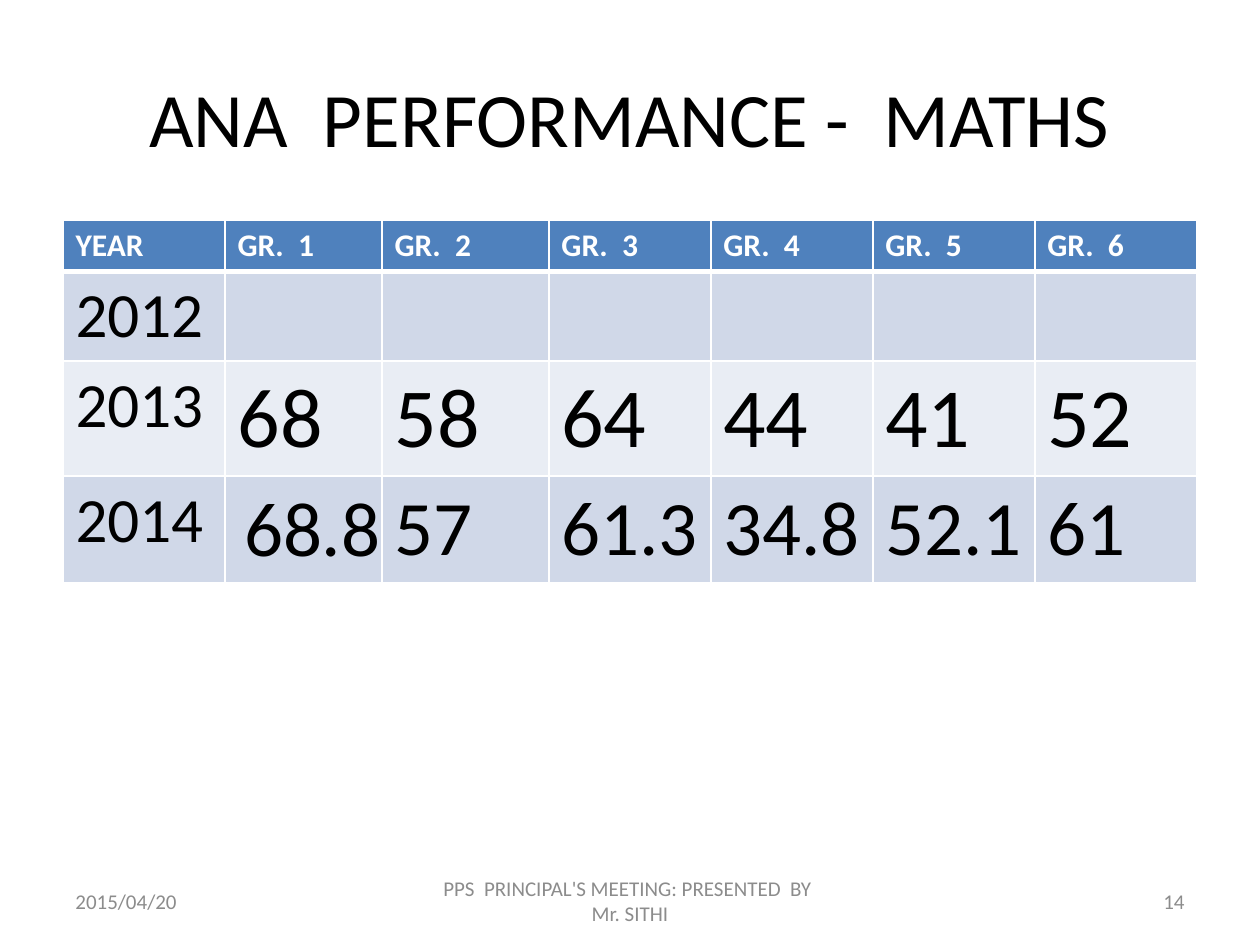
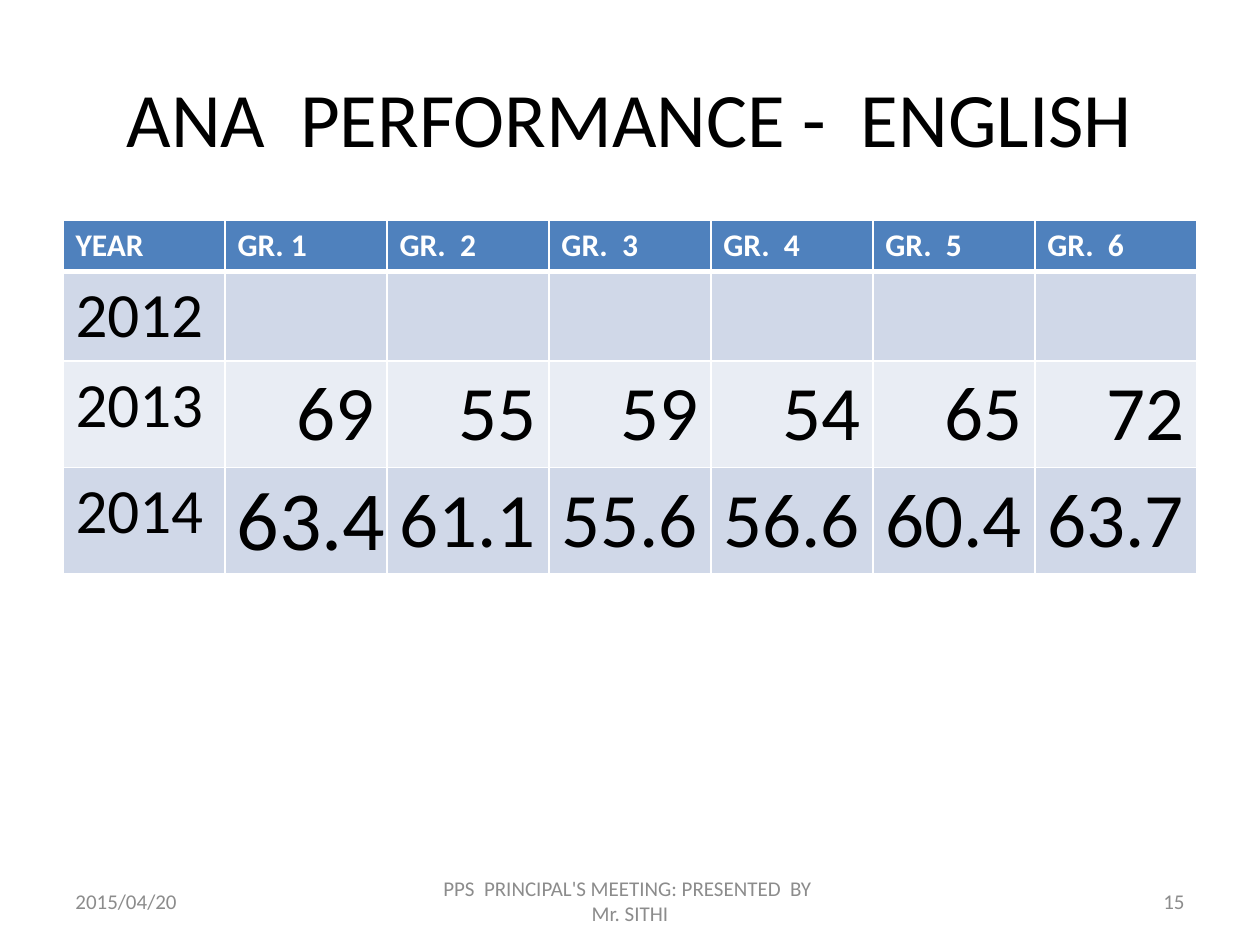
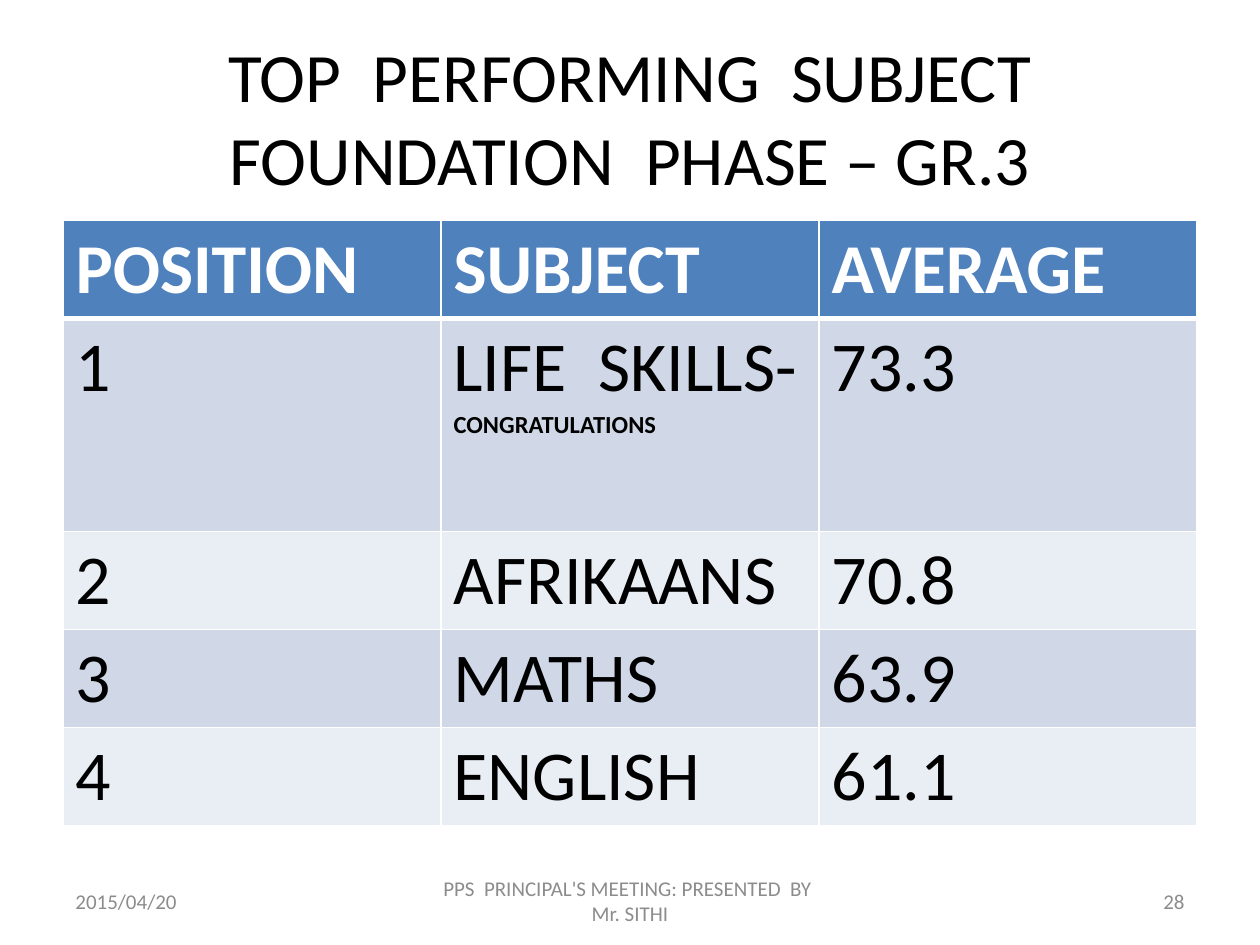
from dataclasses import dataclass

from lxml import etree
from pptx import Presentation
from pptx.dml.color import RGBColor
from pptx.enum.text import MSO_ANCHOR, PP_ALIGN
from pptx.oxml.ns import qn
from pptx.util import Inches, Pt

LEFT, CENTER, RIGHT = PP_ALIGN.LEFT, PP_ALIGN.CENTER, PP_ALIGN.RIGHT
MIDDLE = MSO_ANCHOR.MIDDLE

FONT = "Calibri"
COLORS = {
    "white": "FFFFFF",
    "black": "000000",
    "header": "4F81BD",
    "dark_band": "D0D8E8",
    "light_band": "E9EDF4",
    "footer": "8C8C8C",
}
PAGE_WIDTH, PAGE_HEIGHT = Inches(10), Inches(7.5)
MARGIN = 0.05
CONTENT = 1 - 2 * MARGIN
TABLE_TOP = 1.75 / 7.5
LINE_HEIGHT = 1.22
CELL_PADDING = 0.1
THIN, THICK = 1, 3


@dataclass(frozen=True)
class Area:
    left: float
    top: float
    width: float
    height: float


@dataclass(frozen=True)
class TextStyle:
    size: float
    color: str
    align: PP_ALIGN = LEFT
    bold: bool = False


@dataclass(frozen=True)
class Row:
    label: str
    values: tuple[str, ...]
    size: float
    label_size: float
    align: PP_ALIGN = LEFT
    tight_size: float = 0
    note: str = ""
    height: float = 0

    def inches(self) -> float:
        tallest = max(self.size, self.label_size)
        return self.height or tallest * LINE_HEIGHT / 72 + CELL_PADDING


@dataclass(frozen=True)
class Page:
    title: str
    title_size: float
    number: str
    columns: tuple[float, ...]
    rows: tuple[Row, ...]


TITLE_AREA = Area(MARGIN, 0.04, CONTENT, 1 / 6)
FOOTER_TOP, FOOTER_HEIGHT = 6.95 / 7.5, 0.4 / 7.5
SIDE_WIDTH, MIDDLE_WIDTH = 0.7 / 3, 0.95 / 3
DATE_AREA = Area(MARGIN, FOOTER_TOP, SIDE_WIDTH, FOOTER_HEIGHT)
EVENT_AREA = Area((1 - MIDDLE_WIDTH) / 2, FOOTER_TOP, MIDDLE_WIDTH, FOOTER_HEIGHT)
NUMBER_AREA = Area(1 - MARGIN - SIDE_WIDTH, FOOTER_TOP, SIDE_WIDTH, FOOTER_HEIGHT)

GRADES = tuple(f"GR.  {grade}" for grade in range(1, 7))
NO_MARKS = ("",) * len(GRADES)


def year_header(grades: tuple[str, ...]) -> Row:
    return Row("YEAR", grades, 18, 18)


def ranking(position: int, subject: str, average: str, note: str = "",
            height: float = 0) -> Row:
    return Row(str(position), (subject, average), 40, 40, note=note, height=height)


PAGES = (
    Page("ANA  PERFORMANCE -  MATHS", 44, "14", (1.29, 1.25, 1.33, 1.29, 1.29, 1.29, 1.29), (
        year_header(GRADES),
        Row("2012", NO_MARKS, 36, 36),
        Row("2013", ("68", "58", "64", "44", "41", "52"), 48, 36),
        Row("2014", ("68.8", "57", "61.3", "34.8", "52.1", "61"), 44, 36, tight_size=44),
    )),
    Page("ANA  PERFORMANCE -  ENGLISH", 44, "15", (1,) * 7, (
        year_header(("GR. 1",) + GRADES[1:]),
        Row("2012", NO_MARKS, 36, 36),
        Row("2013", ("69", "55", "59", "54", "65", "72"), 44, 36, RIGHT),
        Row("2014", ("63.4", "61.1", "55.6", "56.6", "60.4", "63.7"), 44, 36, tight_size=48),
    )),
    Page("TOP  PERFORMING  SUBJECT\vFOUNDATION  PHASE – GR.3", 39.6, "28", (1,) * 3, (
        Row("POSITION", ("SUBJECT", "AVERAGE"), 40, 40),
        ranking(1, "LIFE  SKILLS- ", "73.3", "CONGRATULATIONS", 1.69),
        ranking(2, "AFRIKAANS", "70.8"),
        ranking(3, "MATHS", "63.9"),
        ranking(4, "ENGLISH", "61.1"),
    )),
)


def rgb(name: str) -> RGBColor:
    return RGBColor.from_string(COLORS[name])


def format_span(span, style: TextStyle) -> None:
    span.font.name = FONT
    span.font.size = Pt(style.size)
    span.font.bold = style.bold
    span.font.color.rgb = rgb(style.color)


def write(frame, text: str, style: TextStyle) -> None:
    frame.text = text
    for para in frame.paragraphs:
        para.alignment = style.align
        for span in para.runs:
            format_span(span, style)


def add_label(slide, area: Area, text: str, style: TextStyle) -> None:
    box = slide.shapes.add_textbox(
        round(area.left * PAGE_WIDTH), round(area.top * PAGE_HEIGHT),
        round(area.width * PAGE_WIDTH), round(area.height * PAGE_HEIGHT))
    box.text_frame.word_wrap = True
    box.text_frame.vertical_anchor = MIDDLE
    write(box.text_frame, text, style)


def set_borders(cell, top: int, bottom: int) -> None:
    properties = cell._tc.get_or_add_tcPr()
    for side, width in (("L", THIN), ("R", THIN), ("T", top), ("B", bottom)):
        line = etree.SubElement(properties, qn(f"a:ln{side}"), w=str(Pt(width)))
        fill = etree.SubElement(line, qn("a:solidFill"))
        etree.SubElement(fill, qn("a:srgbClr"), val=COLORS["white"])


def fill_cell(cell, row: Row, row_index: int, column: int) -> None:
    is_header = row_index == 0
    is_tight = column == 1 and row.tight_size > 0
    size = row.label_size if column == 0 else row.size
    align = LEFT if column == 0 else row.align
    if is_tight:
        size, align = row.tight_size, RIGHT
        cell.margin_left = cell.margin_right = cell.margin_top = Inches(0.01)
        cell.margin_bottom = 0
        cell.vertical_anchor = MIDDLE
    set_borders(cell, THICK if row_index == 1 else THIN, THICK if is_header else THIN)
    band = "header" if is_header else ("light_band", "dark_band")[row_index % 2]
    cell.fill.solid()
    cell.fill.fore_color.rgb = rgb(band)
    color = "white" if is_header else "black"
    text = (row.label, *row.values)[column]
    write(cell.text_frame, text, TextStyle(size, color, align, is_header))
    if row.note and column == 1:
        span = cell.text_frame.paragraphs[0].add_run()
        span.text = row.note
        format_span(span, TextStyle(14, color, bold=True))


def add_results(slide, page: Page) -> None:
    width = round(CONTENT * PAGE_WIDTH)
    height = Inches(sum(row.inches() for row in page.rows))
    table = slide.shapes.add_table(
        len(page.rows), len(page.columns), round(MARGIN * PAGE_WIDTH),
        round(TABLE_TOP * PAGE_HEIGHT), width, height).table
    for column, share in zip(table.columns, page.columns):
        column.width = round(width * share / sum(page.columns))
    for row_index, row in enumerate(page.rows):
        table.rows[row_index].height = Inches(row.inches())
        for column in range(len(page.columns)):
            fill_cell(table.cell(row_index, column), row, row_index, column)


def add_footer(slide, number: str) -> None:
    for area, text, align in (
        (DATE_AREA, "2015/04/20", LEFT),
        (EVENT_AREA, "PPS  PRINCIPAL'S MEETING: PRESENTED  BY  Mr. SITHI", CENTER),
        (NUMBER_AREA, number, RIGHT),
    ):
        add_label(slide, area, text, TextStyle(12, "footer", align))


def main() -> None:
    deck = Presentation()
    deck.slide_width, deck.slide_height = PAGE_WIDTH, PAGE_HEIGHT
    for page in PAGES:
        slide = deck.slides.add_slide(deck.slide_layouts[6])
        add_label(slide, TITLE_AREA, page.title, TextStyle(page.title_size, "black", CENTER))
        add_results(slide, page)
        add_footer(slide, page.number)
    deck.save("out.pptx")


if __name__ == "__main__":
    main()
